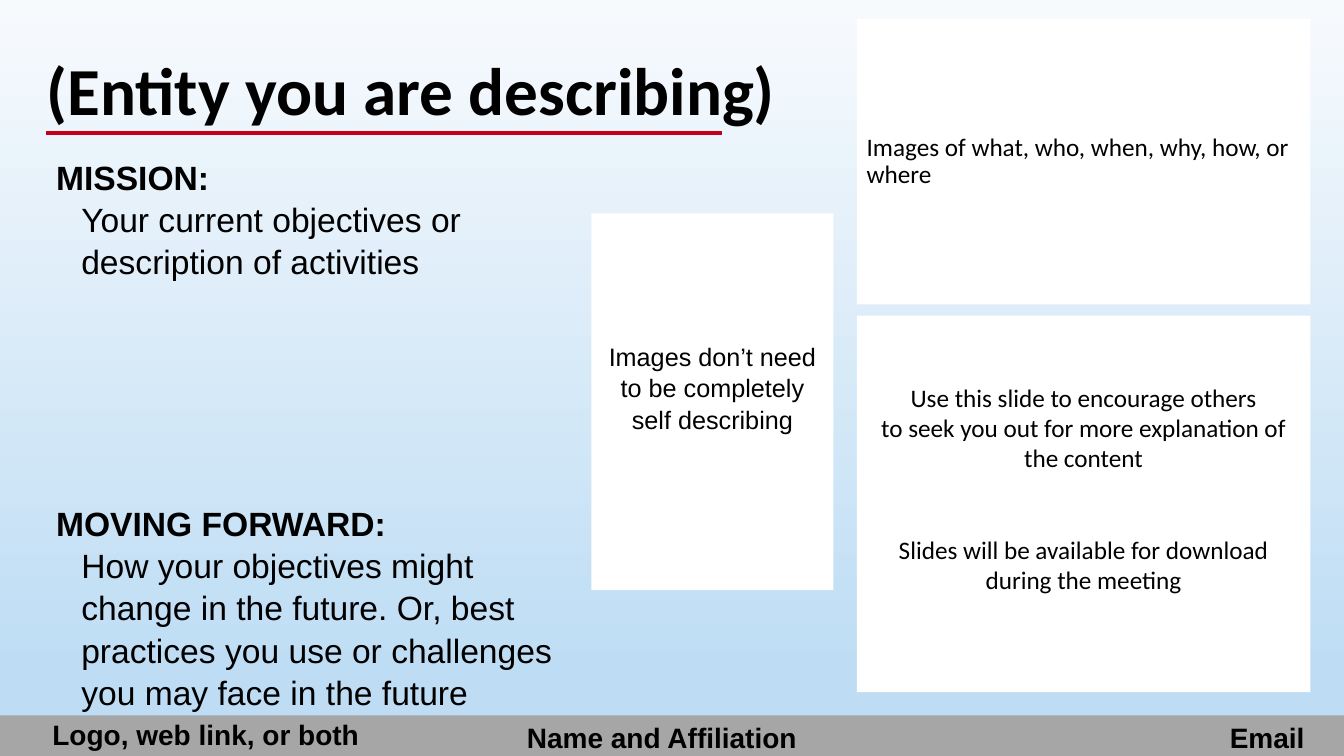
from lxml import etree
from pptx import Presentation
from pptx.dml.color import RGBColor
from pptx.enum.shapes import MSO_CONNECTOR, MSO_SHAPE
from pptx.enum.text import MSO_ANCHOR, MSO_AUTO_SIZE, PP_ALIGN as ALIGN
from pptx.oxml.ns import qn
from pptx.util import Pt


def color(hex_code):
    return RGBColor.from_string(hex_code)


def write(shape, paragraphs, size, font_name="Arial", align=ALIGN.LEFT,
          spacing=1.05, margin_top=3.6, anchor=MSO_ANCHOR.TOP):
    """Fill a shape with (text, bold, indent, space before) paragraphs."""
    frame = shape.text_frame
    frame.word_wrap = True
    frame.auto_size = MSO_AUTO_SIZE.NONE
    frame.vertical_anchor = anchor
    frame.margin_top = Pt(margin_top)
    for index, (text, bold, indent, space_before) in enumerate(paragraphs):
        paragraph = frame.paragraphs[0] if index == 0 else frame.add_paragraph()
        paragraph.alignment = align
        paragraph.line_spacing = spacing
        if space_before:
            paragraph.space_before = Pt(space_before)
        if indent:
            properties = paragraph._p.get_or_add_pPr()
            properties.set("marL", str(Pt(indent)))
            properties.set("indent", "0")
        run = paragraph.add_run()
        run.text = text
        run.font.name = font_name
        run.font.size = Pt(size)
        run.font.bold = bold
        run.font.color.rgb = color("000000")


presentation = Presentation()
presentation.slide_width = Pt(960)
presentation.slide_height = Pt(540)
slide = presentation.slides.add_slide(presentation.slide_layouts[5])
shapes = slide.shapes

# Background fades from near white at the top to light blue
background = slide.background.fill
background.gradient()
background.gradient_angle = 270
for stop, (position, shade) in zip(background.gradient_stops,
                                   [(0, "F7FAFD"), (0.89, "BEDDF4")]):
    stop.position = position
    stop.color.rgb = color(shade)

# Footer bar and white panels
panels = []
for left, top, width, height, fill in [
    (0, 511, 960, 29, "A6A6A6"),
    (612, 13.7, 324, 203.8, "FFFFFF"),
    (422.5, 152.5, 172.8, 269, "FFFFFF"),
    (612, 225.5, 324, 269, "FFFFFF"),
]:
    panel = shapes.add_shape(MSO_SHAPE.RECTANGLE, Pt(left), Pt(top), Pt(width), Pt(height))
    panel.shadow.inherit = False
    panel.fill.solid()
    panel.fill.fore_color.rgb = color(fill)
    panel.line.fill.background()
    panels.append(panel)
footer_bar, subject_panel, describing_panel, encourage_panel = panels

write(subject_panel, [("Images of what, who, when, why, how, or where", False, 0, 0)],
      18, "Calibri", spacing=0.9, anchor=MSO_ANCHOR.MIDDLE)
write(describing_panel, [("Images don’t need to be completely self describing", False, 0, 0)],
      18, align=ALIGN.CENTER, margin_top=90)
write(encourage_panel, [
    ("Use this slide to encourage others", False, 0, 0),
    ("to seek you out for more explanation of the content", False, 0, 0),
    ("Slides will be available for download during the meeting", False, 0, 43.5),
], 18, "Calibri", ALIGN.CENTER, spacing=1, margin_top=47.5)

# Title and its underline
title = shapes.title
title.left, title.top, title.width, title.height = Pt(26), Pt(31), Pt(572), Pt(66)
write(title, [("(Entity you are describing)", True, 0, 0)], 48, "Calibri", spacing=1)

underline = shapes.add_connector(MSO_CONNECTOR.STRAIGHT, Pt(33), Pt(95), Pt(515.5), Pt(95))
underline.line.color.rgb = color("C50018")
underline.line.width = Pt(2.25)
etree.SubElement(underline._element.spPr, qn("a:effectLst"))

# Mission and outlook
goals = shapes.add_textbox(Pt(33), Pt(107), Pt(373), Pt(400))
write(goals, [
    ("MISSION:", True, 0, 0),
    ("Your current objectives or description of activities", False, 18, 0),
    ("MOVING FORWARD:", True, 0, 156.5),
    ("How your objectives might change in the future. Or, best practices you use "
     "or challenges you may face in the future", False, 18, 0),
], 24)

# Footer labels
for text, left, top, width, align in [
    ("Logo, web link, or both", 20, 507.5, 254, ALIGN.CENTER),
    ("Name and Affiliation", 311.5, 510, 322.5, ALIGN.CENTER),
    ("Email", 684, 510, 255, ALIGN.RIGHT),
]:
    label = shapes.add_textbox(Pt(left), Pt(top), Pt(width), Pt(30))
    write(label, [(text, True, 0, 0)], 20, align=align)

presentation.save("out.pptx")
